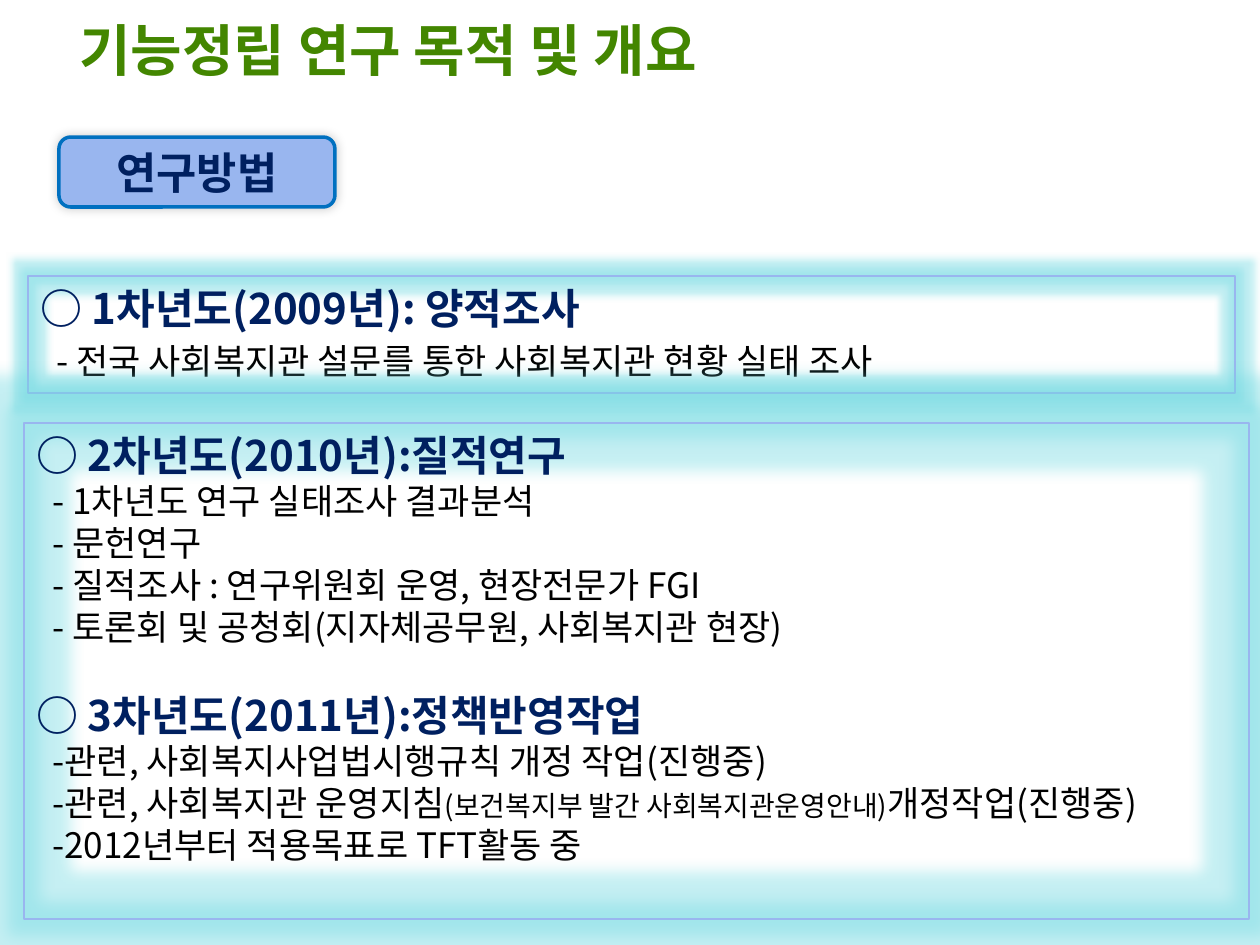
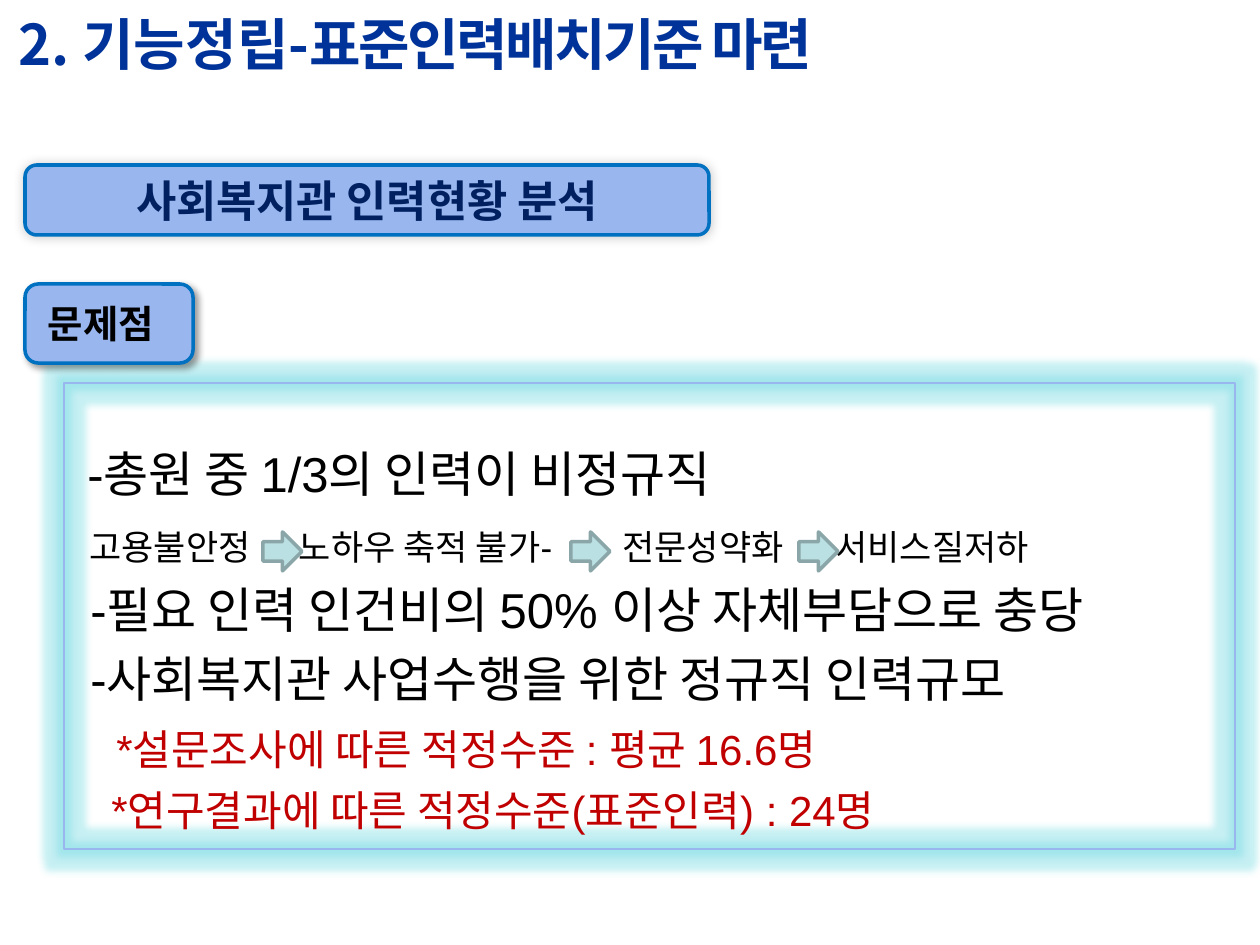
import pptx
import pptx.util
import pptx.dml.color
import pptx.enum.shapes
import pptx.enum.text
import pptx.oxml
import pptx.oxml.ns

RGB = pptx.dml.color.RGBColor
KIND = pptx.enum.shapes.MSO_SHAPE
ALIGN = pptx.enum.text.PP_ALIGN
ANCHOR = pptx.enum.text.MSO_ANCHOR
Pt = pptx.util.Pt
qn = pptx.oxml.ns.qn

GREEN = RGB(0x43, 0x86, 0x00)
BLUE = RGB(0x00, 0x33, 0x99)
NAVY = RGB(0x00, 0x20, 0x60)
BLACK = RGB(0, 0, 0)
RED = RGB(0xC0, 0x00, 0x00)
SKY = RGB(0x99, 0xB6, 0xEF)
EDGE = RGB(0x00, 0x70, 0xC0)
MINT = RGB(0xBB, 0xE0, 0xE3)
SLATE = RGB(0x8A, 0xA6, 0xA8)
GLOW = RGB(0x6E, 0xD9, 0xE1)

KOREAN = "Noto Sans CJK KR"
LATIN = "Arial"


def px(n):
    return round(n * 914400 / 126)


def node(xml):
    return pptx.oxml.parse_xml(xml.replace(" ", f' {pptx.oxml.ns.nsdecls("a")} ', 1))


def paint(run, size, color, bold, face=KOREAN):
    run.font.size = Pt(size)
    run.font.bold = bold
    run.font.color.rgb = color
    run.font.name = face
    run._r.get_or_add_rPr().append(node(f'<a:ea typeface="{KOREAN}"/>'))


def shape(slide, kind, box, fill, line, width):
    item = slide.shapes.add_shape(kind, *map(px, box))
    item.shadow.inherit = False
    if fill is None:
        item.fill.background()
    else:
        item.fill.solid()
        item.fill.fore_color.rgb = fill
    item.line.color.rgb = line
    item.line.width = Pt(width)
    return item


def effect(item, xml):
    item._element.spPr.find(qn("a:effectLst")).append(node(xml))


def title(slide, box, parts, color, anchor):
    frame = slide.shapes.add_textbox(*map(px, box)).text_frame
    frame.word_wrap = True
    frame.vertical_anchor = anchor
    for text, gap in parts:
        run = frame.paragraphs[0].add_run()
        run.text = text
        paint(run, 32, color, True)
        if gap:
            run._r.rPr.set("spc", str(gap))


def pill(slide, box, text, size=25, color=NAVY, inset=None, cast=(20, 6, 0, 315)):
    item = shape(slide, KIND.ROUNDED_RECTANGLE, box, SKY, EDGE, 2)
    alpha, blur, dist, angle = cast
    effect(item, f'<a:outerShdw blurRad="{Pt(blur)}" dist="{Pt(dist)}" dir="{angle * 60000}" '
                 f'rotWithShape="0"><a:srgbClr val="000000"><a:alpha val="{alpha * 1000}"/>'
                 '</a:srgbClr></a:outerShdw>')
    frame = item.text_frame
    frame.text = text
    frame.vertical_anchor = ANCHOR.MIDDLE
    para = frame.paragraphs[0]
    para.alignment = ALIGN.CENTER
    if inset is not None:
        para.alignment = ALIGN.LEFT
        frame.margin_left = px(inset)
    paint(para.runs[0], size, color, True)


def head(text, before=0):
    return [(text, 24)], NAVY, True, 0, before


def item(*parts, before=0):
    return [(text, size) for text, size in parts], BLACK, False, 16, before


def point(text, size, indent, before, color=BLACK):
    return [(text, size)], color, False, indent, before


def panel(slide, box, rows, radius, face=KOREAN, top=6, stops=()):
    frame = shape(slide, KIND.RECTANGLE, box, None, SKY, 0.75)
    effect(frame, f'<a:glow rad="{Pt(radius)}"><a:srgbClr val="{GLOW}">'
                  '<a:alpha val="40000"/></a:srgbClr></a:glow>')
    body = frame.text_frame
    body.word_wrap = True
    body.vertical_anchor = ANCHOR.TOP
    body.margin_top = px(top)
    for i, (parts, color, bold, indent, before) in enumerate(rows):
        para = body.add_paragraph() if i else body.paragraphs[0]
        para.alignment = ALIGN.LEFT
        if before:
            para.space_before = Pt(before)
        props = para._p.get_or_add_pPr()
        props.set("marL", str(px(indent)))
        if "\t" in parts[0][0]:
            tabs = "".join(f'<a:tab pos="{px(x)}" algn="l"/>' for x in stops)
            props.append(node(f'<a:tabLst >{tabs}</a:tabLst>'))
        for text, size in parts:
            run = para.add_run()
            run.text = text
            paint(run, size, color, bold, face)


def method(slide):
    title(slide, (67, 6, 1119, 86), [("기능정립 연구 목적 및 개요", 0)], GREEN, ANCHOR.MIDDLE)
    panel(slide, (28, 276, 1207, 117), [
        head("○ 1차년도(2009년): 양적조사"),
        item(("- 전국 사회복지관 설문를 통한 사회복지관 현황 실태 조사", 20), before=4),
    ], 8)
    pill(slide, (59, 137, 276, 70), "연구방법")
    panel(slide, (24, 423, 1225, 496), [
        head("○ 2차년도(2010년):질적연구"),
        item(("- 1차년도 연구 실태조사 결과분석", 20)),
        item(("- 문헌연구", 20)),
        item(("- 질적조사 : 연구위원회 운영, 현장전문가 FGI", 20)),
        item(("- 토론회 및 공청회(지자체공무원, 사회복지관 현장)", 20)),
        head("○ 3차년도(2011년):정책반영작업", 24),
        item(("-관련, 사회복지사업법시행규칙 개정 작업(진행중)", 20)),
        item(("-관련, 사회복지관 운영지침", 20),
             ("(보건복지부 발간 사회복지관운영안내)", 16),
             ("개정작업(진행중)", 20)),
        item(("-2012년부터 적용목표로 TFT활동 중", 20)),
    ], 18)


def staff(slide):
    panel(slide, (64, 383, 1171, 466), [
        point("-총원 중 1/3의 인력이 비정규직", 28, 11, 0),
        point("\t고용불안정\t-노하우 축적 불가-\t전문성약화\t서비스질저하", 20, 0, 13),
        point("-필요 인력 인건비의 50% 이상 자체부담으로 충당", 28, 14, 7),
        point("-사회복지관 사업수행을 위한 정규직 인력규모", 28, 14, 5.6),
        point("*설문조사에 따른 적정수준 : 평균 16.6명", 24, 40, 9, RED),
        point("*연구결과에 따른 적정수준(표준인력) : 24명", 24, 35, 6, RED),
    ], 8, LATIN, 61, (13, 211, 546, 759))
    pill(slide, (25, 165, 684, 70), "사회복지관 인력현황 분석")
    pill(slide, (25, 284, 168, 79), "문제점", 22, BLACK, 19, (40, 4, 3, 45))
    title(slide, (6, 3, 1116, 81), [("2. 기능정립-", 0), ("표준인력배치기준 마련", -150)],
          BLUE, ANCHOR.TOP)
    for left in (263, 571, 799):
        shape(slide, KIND.RIGHT_ARROW, (left, 532, 39, 39), MINT, SLATE, 2)


def main():
    deck = pptx.Presentation()
    deck.slide_width = px(1260)
    deck.slide_height = px(945)
    for build in (method, staff):
        build(deck.slides.add_slide(deck.slide_layouts[6]))
    deck.save("out.pptx")


if __name__ == "__main__":
    main()
